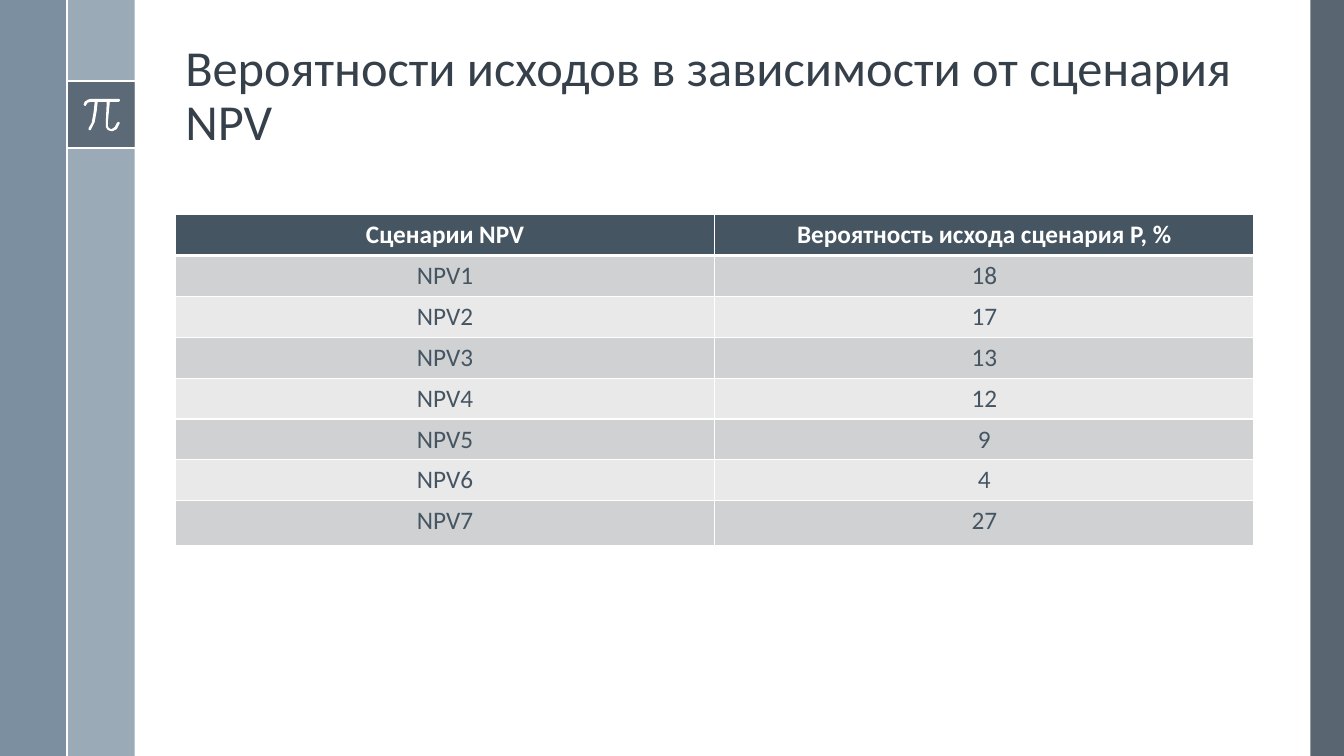
from lxml import etree
from pptx import Presentation
from pptx.dml.color import RGBColor
from pptx.enum import shapes, text
from pptx.oxml import ns
from pptx.util import Pt

COLORS = {
    "white": "FFFFFF", "title": "35404A", "table": "465562", "slate": "475562",
    "left": "6A8093", "stripe": "9BAAB7", "odd": "CFD1D3", "even": "E9E9EA",
}
FONT = "Calibri"
HEIGHT = 540
STRIPE = 48.1
BADGE_TOP, BADGE_BOTTOM = 58, 106
ROW_HEIGHT, LAST_ROW_HEIGHT = 29.2, 31.76
ROWS = [
    ("Сценарии NPV", "Вероятность исхода сценария P, %"),
    ("NPV1", "18"), ("NPV2", "17"), ("NPV3", "13"), ("NPV4", "12"),
    ("NPV5", "9"), ("NPV6", "4"), ("NPV7", "27"),
]
# Outline of the pi sign, in hundredths of an inch
PI = [
    (118, 98), (90, 98), (87, 99), (84.5, 101), (83, 104), (83.5, 105), (85, 105),
    (87, 102), (90, 101), (94, 101), (93, 111), (91, 122), (88, 127), (87.5, 128),
    (88, 129), (89, 129.3), (90, 129), (94, 121), (96, 110), (97, 101), (106, 101),
    (105, 122), (105, 126), (107, 129), (110, 130), (112, 130), (116, 127.5),
    (118.5, 124), (119, 122), (118, 121), (117, 121), (116, 122), (114.5, 126),
    (111, 128), (109.5, 128), (108, 127), (107, 125), (107, 122), (109, 101),
    (118, 101), (119, 100), (119, 99),
]


def rgb(name):
    return RGBColor.from_string(COLORS[name])


def paint(sp, color, alpha=100):
    sp.shadow.inherit = False
    sp.line.fill.background()
    sp.fill.solid()
    sp.fill.fore_color.rgb = rgb(color)
    if alpha < 100:
        clr = sp._element.spPr.find(".//" + ns.qn("a:srgbClr"))
        etree.SubElement(clr, ns.qn("a:alpha")).set("val", str(alpha * 1000))


def add_rect(s, x, y, w, h, color, alpha=100):
    sp = s.shapes.add_shape(shapes.MSO_SHAPE.RECTANGLE, Pt(x), Pt(y), Pt(w), Pt(h))
    paint(sp, color, alpha)


def add_rule(s, x1, y1, x2, y2):
    line = s.shapes.add_connector(
        shapes.MSO_CONNECTOR.STRAIGHT, Pt(x1), Pt(y1), Pt(x2), Pt(y2))
    line.line.color.rgb = rgb("white")
    line.line.width = Pt(1.5)
    etree.SubElement(line._element.spPr, ns.qn("a:effectLst"))


def add_pi(s):
    builder = s.shapes.build_freeform(*PI[0], scale=Pt(0.72))
    builder.add_line_segments(PI[1:], close=True)
    paint(builder.convert_to_shape(), "white")


def add_run(p, words, size, color, bold=False):
    r = p.add_run()
    r.text = words
    r.font.name, r.font.size, r.font.bold = FONT, Pt(size), bold
    r.font.color.rgb = rgb(color)


def add_title(s, words):
    tf = s.shapes.add_textbox(Pt(125.3), Pt(13.7), Pt(770.4), Pt(98)).text_frame
    tf.word_wrap = True
    tf.vertical_anchor = text.MSO_ANCHOR.BOTTOM
    p = tf.paragraphs[0]
    p.line_spacing = 0.9
    add_run(p, words, 36, "title")


def set_borders(cell, widths):
    """Draw white cell borders; widths maps a side (L, R, T, B) to points."""
    tc_pr = cell._tc.get_or_add_tcPr()
    for i, (side, width) in enumerate(widths.items()):
        ln = etree.Element(ns.qn("a:ln" + side), w=str(Pt(width)))
        fill = etree.SubElement(ln, ns.qn("a:solidFill"))
        etree.SubElement(fill, ns.qn("a:srgbClr"), val=COLORS["white"])
        tc_pr.insert(i, ln)


def add_table(s, rows):
    height = ROW_HEIGHT * (len(rows) - 1) + LAST_ROW_HEIGHT
    table = s.shapes.add_table(
        len(rows), 2, Pt(125.3), Pt(153.3), Pt(770.4), Pt(height)).table
    for i, row in enumerate(rows):
        last = i == len(rows) - 1
        table.rows[i].height = Pt(LAST_ROW_HEIGHT if last else ROW_HEIGHT)
        header = i == 0
        fill = "table" if header else ("odd" if i % 2 else "even")
        for j, words in enumerate(row):
            cell = table.cell(i, j)
            cell.fill.solid()
            cell.fill.fore_color.rgb = rgb(fill)
            set_borders(cell, {"L": 1, "R": 1, "T": 3 if i == 1 else 1,
                               "B": 3 if header else 1})
            p = cell.text_frame.paragraphs[0]
            p.alignment = text.PP_ALIGN.CENTER
            add_run(p, words, 18, "white" if header else "table", header)


def main():
    prs = Presentation()
    prs.slide_width, prs.slide_height = Pt(960), Pt(HEIGHT)
    s = prs.slides.add_slide(prs.slide_layouts[6])
    add_rect(s, 936, 0, 24, HEIGHT, "slate", 90)
    add_rect(s, STRIPE, 0, STRIPE, HEIGHT, "stripe")
    add_rect(s, 0, 0, STRIPE, HEIGHT, "left", 88)
    add_rect(s, STRIPE, BADGE_TOP, STRIPE, BADGE_BOTTOM - BADGE_TOP, "slate", 75)
    for y in (BADGE_TOP, BADGE_BOTTOM):
        add_rule(s, STRIPE, y, 2 * STRIPE, y)
    add_pi(s)
    add_rule(s, STRIPE, 0, STRIPE, HEIGHT)
    add_title(s, "Вероятности исходов в зависимости от сценария NPV")
    add_table(s, ROWS)
    prs.save("out.pptx")


if __name__ == "__main__":
    main()
